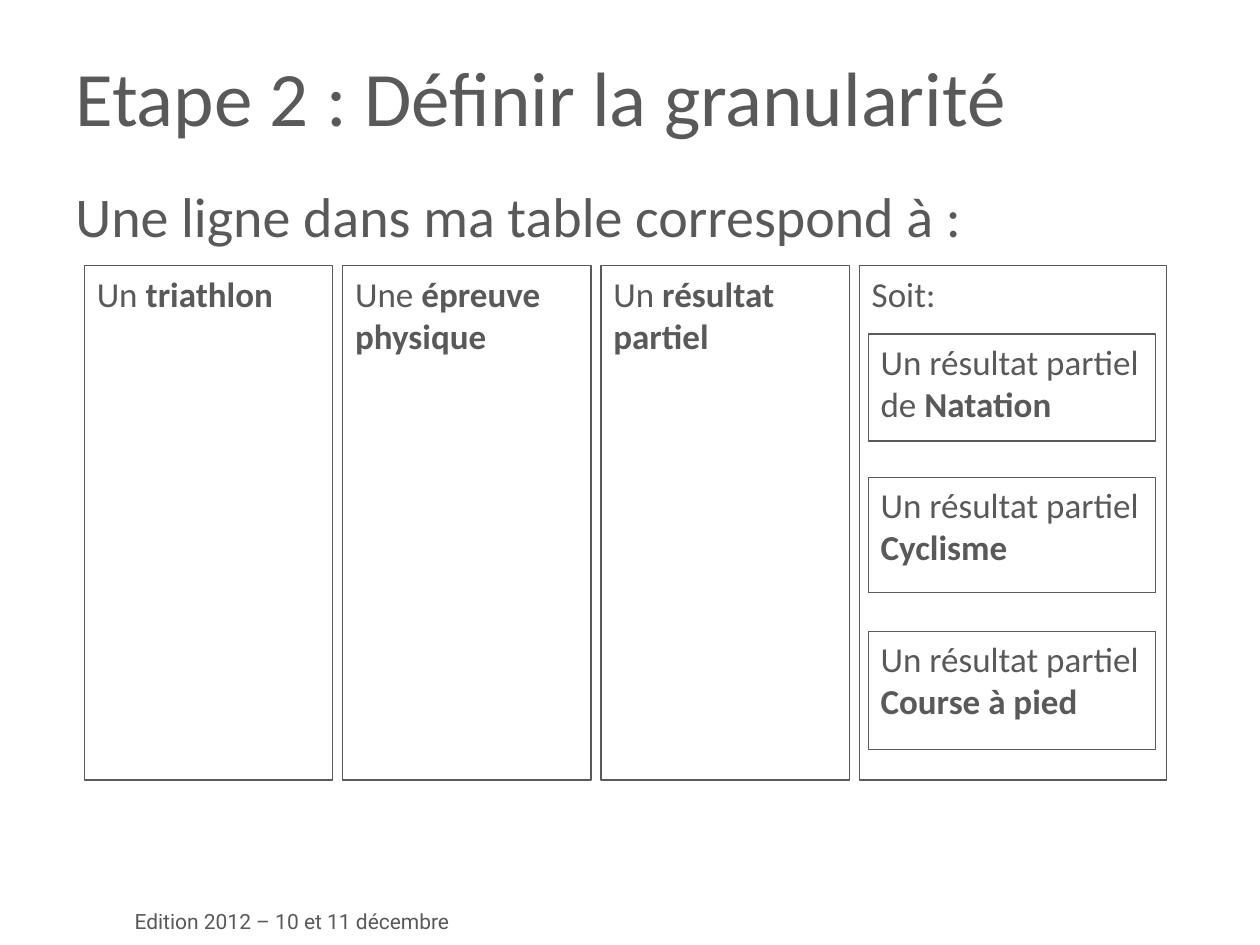
from dataclasses import dataclass

import pptx
import pptx.dml.color
import pptx.enum.shapes
import pptx.enum.text
import pptx.util
from pptx.util import Inches

COLORS = {"text": "595959", "line": "595959"}


@dataclass
class Card:
    left: float
    top: float
    width: float
    height: float
    lead: str
    strong: str = ""


def rgb(name: str) -> pptx.dml.color.RGBColor:
    return pptx.dml.color.RGBColor.from_string(COLORS[name])


def write(box, lead: str, strong: str = "", size: int = 20, font: str = "Calibri",
          wrap: bool = True, middle: bool = False, spacing: float = 1.0) -> None:
    """Fill a box with one paragraph: a plain start and a bold end."""
    anchor = pptx.enum.text.MSO_ANCHOR
    frame = box.text_frame
    frame.word_wrap = wrap
    frame.vertical_anchor = anchor.MIDDLE if middle else anchor.TOP
    para = frame.paragraphs[0]
    para.alignment = pptx.enum.text.PP_ALIGN.LEFT
    para.line_spacing = spacing
    for text, bold in ((lead, False), (strong, True)):
        if not text:
            continue
        span = para.add_run()
        span.text = text
        span.font.color.rgb = rgb("text")
        values = {"name": font, "size": pptx.util.Pt(size), "bold": bold}
        for key, value in values.items():
            setattr(span.font, key, value)


def add_text(page, left: float, top: float, width: float, height: float,
             text: str, **style) -> None:
    box = page.shapes.add_textbox(*map(Inches, (left, top, width, height)))
    write(box, text, **style)


def add_card(page, card: Card) -> None:
    box = page.shapes.add_shape(
        pptx.enum.shapes.MSO_SHAPE.RECTANGLE,
        *map(Inches, (card.left, card.top, card.width, card.height)))
    box.shadow.inherit = False
    box.fill.background()
    box.line.color.rgb = rgb("line")
    box.line.width = pptx.util.Pt(0.75)
    write(box, card.lead, card.strong)


def main() -> None:
    deck = pptx.Presentation()
    deck.slide_width, deck.slide_height = Inches(10), Inches(7.5)
    page = deck.slides.add_slide(deck.slide_layouts[6])

    # Footer, title and introduction
    add_text(page, 0.97, 7.16, 2.77, 0.3, "Edition 2012 – 10 et 11 décembre",
             size=12, font="Roboto", wrap=False)
    add_text(page, 0.5, 0.3, 9, 1.01, "Etape 2 : Définir la granularité",
             size=44, middle=True, spacing=0.9)
    add_text(page, 0.5, 1.39, 9, 5.36, "Une ligne dans ma table correspond à :",
             size=32)

    # Four columns at an equal pitch, the last one wider
    left, pitch, top, height = 0.67, 2.05, 2.11, 4.08
    columns = [("Un ", "triathlon", 1.97), ("Une ", "épreuve physique", 1.97),
               ("Un ", "résultat partiel", 1.97), ("Soit:", "", 2.44)]
    for index, (lead, strong, width) in enumerate(columns):
        add_card(page, Card(left + index * pitch, top, width, height, lead, strong))

    # Partial results inside the last column
    results = [(2.65, 0.85, "de ", "Natation"), (3.79, 0.91, "", "Cyclisme"),
               (5.01, 0.94, "", "Course à pied")]
    for top, height, link, sport in results:
        add_card(page, Card(6.89, top, 2.28, height,
                            "Un résultat partiel " + link, sport))

    deck.save("out.pptx")


if __name__ == "__main__":
    main()
